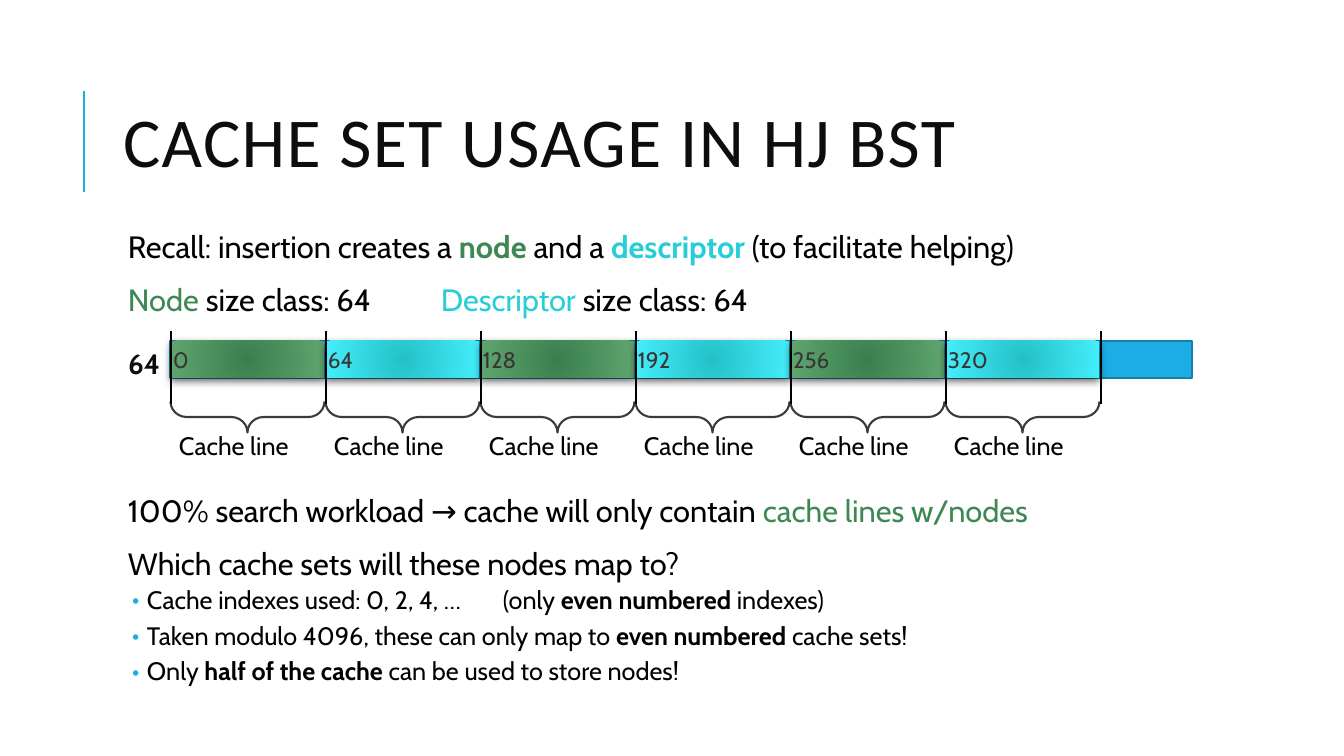
from lxml import etree
from pptx import Presentation
from pptx.dml.color import RGBColor
from pptx.enum.shapes import MSO_CONNECTOR as Connector, MSO_SHAPE as Preset
from pptx.enum.text import MSO_ANCHOR as Anchor, MSO_AUTO_SIZE as AutoSize, PP_ALIGN as Align
from pptx.oxml import parse_xml
from pptx.oxml.ns import nsdecls, qn
from pptx.util import Pt

PAGE_WIDTH, PAGE_HEIGHT = 1344, 756
SCALE = 12192000 / PAGE_WIDTH

BLACK = RGBColor(0x00, 0x00, 0x00)
INK = RGBColor(0x0D, 0x0D, 0x0D)
LABEL = RGBColor(0x38, 0x36, 0x35)
BRACE = RGBColor(0x3B, 0x3B, 0x3B)
BLUE = RGBColor(0x1C, 0xAD, 0xE4)
BLUE_EDGE = RGBColor(0x15, 0x80, 0xA9)
GREEN = RGBColor(0x3E, 0x88, 0x53)
TEAL = RGBColor(0x27, 0xCE, 0xD7)
NODE_FILL = (RGBColor(0x3A, 0x7F, 0x4D), RGBColor(0x5F, 0xA5, 0x6F))
DESCRIPTOR_FILL = (RGBColor(0x24, 0xC0, 0xC8), RGBColor(0x44, 0xEE, 0xFA))

LINE_START, LINE_PITCH, LINE_COUNT, LINE_BYTES = 170, 155, 6, 64

# A paragraph is a list of (text, colour, bold) spans.
STATEMENTS = [
    [("Recall: insertion creates a ", BLACK, False), ("node ", GREEN, True),
     ("and a ", BLACK, False), ("descriptor ", TEAL, True),
     ("(to facilitate helping)", BLACK, False)],
    [("Node", GREEN, False), (" size class: 64\t", BLACK, False),
     ("Descriptor ", TEAL, False), ("size class: 64", BLACK, False)],
    [("100% search workload → cache will only contain ", BLACK, False),
     ("cache lines w/nodes", GREEN, False)],
    [("Which cache sets will these nodes map to?", BLACK, False)],
]
FINDINGS = [
    [("Cache indexes used: 0, 2, 4, …\t(only ", BLACK, False),
     ("even numbered", BLACK, True), (" indexes)", BLACK, False)],
    [("Taken modulo 4096, these can only map to ", BLACK, False),
     ("even numbered ", BLACK, True), ("cache sets!", BLACK, False)],
    [("Only ", BLACK, False), ("half of the cache ", BLACK, True),
     ("can be used to store nodes!", BLACK, False)],
]


def emu(px):
    return round(px * SCALE)


class Painter:
    """Holds the style and the current slide; lengths are whole px."""
    font = "Cabin"

    def __init__(self, page):
        self.page = page

    def style(self, span, size, color, bold=False, name=None):
        span.font.name = name or self.font
        span.font.size = Pt(size)
        span.font.bold = bold
        span.font.color.rgb = color

    def title(self, text, *place):
        box = self.page.shapes.title
        box.left, box.top, box.width, box.height = map(emu, place)
        frame = box.text_frame
        frame.text = text
        frame.auto_size = AutoSize.NONE
        frame.vertical_anchor = Anchor.MIDDLE
        para = frame.paragraphs[0]
        para.alignment = Align.LEFT
        para.line_spacing = 0.8
        span = para.runs[0]
        self.style(span, 50, INK, name="Calibri")
        span.font._element.set("spc", "100")

    def text_box(self, *place):
        return self.page.shapes.add_textbox(*map(emu, place))

    def label(self, box, text, size, color, align=Align.LEFT, bold=False, inset=10):
        frame = box.text_frame
        frame.margin_left = emu(inset)
        frame.text = text
        para = frame.paragraphs[0]
        para.alignment = align
        self.style(para.runs[0], size, color, bold)
        return frame

    def paragraph(self, para, spans, size, before, after, tab, bullet=False):
        para.line_spacing = 0.9
        para.space_before, para.space_after = Pt(before), Pt(after)
        for text, color, bold in spans:
            span = para.add_run()
            span.text = text
            self.style(span, size, color, bold)
        settings = para._p.get_or_add_pPr()
        if bullet:
            settings.set("marL", str(emu(19)))
            settings.set("indent", str(-emu(15)))
            tint = etree.SubElement(settings, qn("a:buClr"))
            etree.SubElement(tint, qn("a:srgbClr"), val=str(BLUE))
            etree.SubElement(settings, qn("a:buFont"), typeface=self.font)
            etree.SubElement(settings, qn("a:buChar"), char="•")
        stops = etree.SubElement(settings, qn("a:tabLst"))
        etree.SubElement(stops, qn("a:tab"), pos=str(emu(tab)), algn="l")

    def shape(self, preset, place, fill=None, line=None, weight=1.25):
        box = self.page.shapes.add_shape(preset, *map(emu, place))
        box.shadow.inherit = False
        if fill is None:
            box.fill.background()
        else:
            box.fill.solid()
            box.fill.fore_color.rgb = fill
        if line is None:
            box.line.fill.background()
        else:
            box.line.color.rgb = line
            box.line.width = Pt(weight)
        return box

    def cell(self, text, place, colors):
        """Rectangle with a radial gradient, a soft shadow and an address."""
        inner, outer = colors
        box = self.shape(Preset.RECTANGLE, place, inner)
        properties = box._element.spPr
        solid = properties.find(qn("a:solidFill"))
        properties.replace(solid, parse_xml(
            f'<a:gradFill {nsdecls("a")} rotWithShape="1"><a:gsLst>'
            f'<a:gs pos="0"><a:srgbClr val="{inner}"/></a:gs>'
            f'<a:gs pos="100000"><a:srgbClr val="{outer}"/></a:gs></a:gsLst>'
            '<a:path path="circle"><a:fillToRect l="50000" t="50000" '
            'r="50000" b="50000"/></a:path></a:gradFill>'))
        effects = properties.find(qn("a:effectLst"))
        effects.append(parse_xml(
            f'<a:outerShdw {nsdecls("a")} blurRad="{Pt(6)}" dist="{Pt(2)}" '
            'dir="5400000" rotWithShape="0"><a:srgbClr val="000000">'
            '<a:alpha val="60000"/></a:srgbClr></a:outerShdw>'))
        frame = self.label(box, text, 16, LABEL, inset=2)
        frame.vertical_anchor = Anchor.MIDDLE

    def brace(self, center_x, center_y, span, depth):
        """Brace below a cell, pointing down."""
        place = (center_x - depth / 2, center_y - span / 2, depth, span)
        box = self.shape(Preset.LEFT_BRACE, place, line=BRACE, weight=1.5)
        box.rotation = 270
        box.adjustments[0] = 0.52

    def vertical(self, x, top, bottom, color):
        line = self.page.shapes.add_connector(
            Connector.STRAIGHT, emu(x), emu(bottom), emu(x), emu(top))
        line.line.color.rgb = color
        line.line.width = Pt(1.5)
        etree.SubElement(line._element.spPr, qn("a:effectLst"))


def add_body(painter):
    frame = painter.text_box(118, 227, 1067, 485).text_frame
    frame.word_wrap = True
    frame.margin_left = emu(10)
    frame.margin_right = frame.margin_top = frame.margin_bottom = emu(5)
    for index, spans in enumerate(STATEMENTS):
        para = frame.paragraphs[0] if index == 0 else frame.add_paragraph()
        before = 125 if index == 2 else 12  # room for the memory bar
        painter.paragraph(para, spans, 22, before, 2, tab=313)
    for spans in FINDINGS:
        painter.paragraph(frame.add_paragraph(), spans, 18, 2, 4, tab=375, bullet=True)


def add_memory_bar(painter):
    painter.shape(Preset.RECTANGLE, (LINE_START, 341, 1022, 37), BLUE, BLUE_EDGE)
    size_box = painter.text_box(105, 342, 65, 44)
    painter.label(size_box, "64", 20, INK, Align.RIGHT, bold=True).word_wrap = True
    for index in range(LINE_COUNT):
        left = LINE_START + index * LINE_PITCH
        painter.brace(left + LINE_PITCH / 2, 417, LINE_PITCH - 1, 31)
        caption = painter.text_box(left + 7, 425, 141, 40)
        frame = painter.label(caption, "Cache line", 18, BLACK, inset=2)
        frame.word_wrap = False
        frame.vertical_anchor = Anchor.MIDDLE
        colors = DESCRIPTOR_FILL if index % 2 else NODE_FILL
        painter.cell(str(index * LINE_BYTES), (left + 1, 341, 153, 37), colors)
    for index in range(LINE_COUNT + 1):
        painter.vertical(LINE_START + index * LINE_PITCH + 1, 331, 404, BLACK)


def main():
    deck = Presentation()
    deck.slide_width, deck.slide_height = emu(PAGE_WIDTH), emu(PAGE_HEIGHT)
    painter = Painter(deck.slides.add_slide(deck.slide_layouts[5]))
    painter.vertical(84, 91, 192, BLUE)
    painter.title("CACHE SET USAGE IN HJ BST", 113, 65, 1072, 165)
    add_body(painter)
    add_memory_bar(painter)
    deck.save("out.pptx")


if __name__ == "__main__":
    main()
